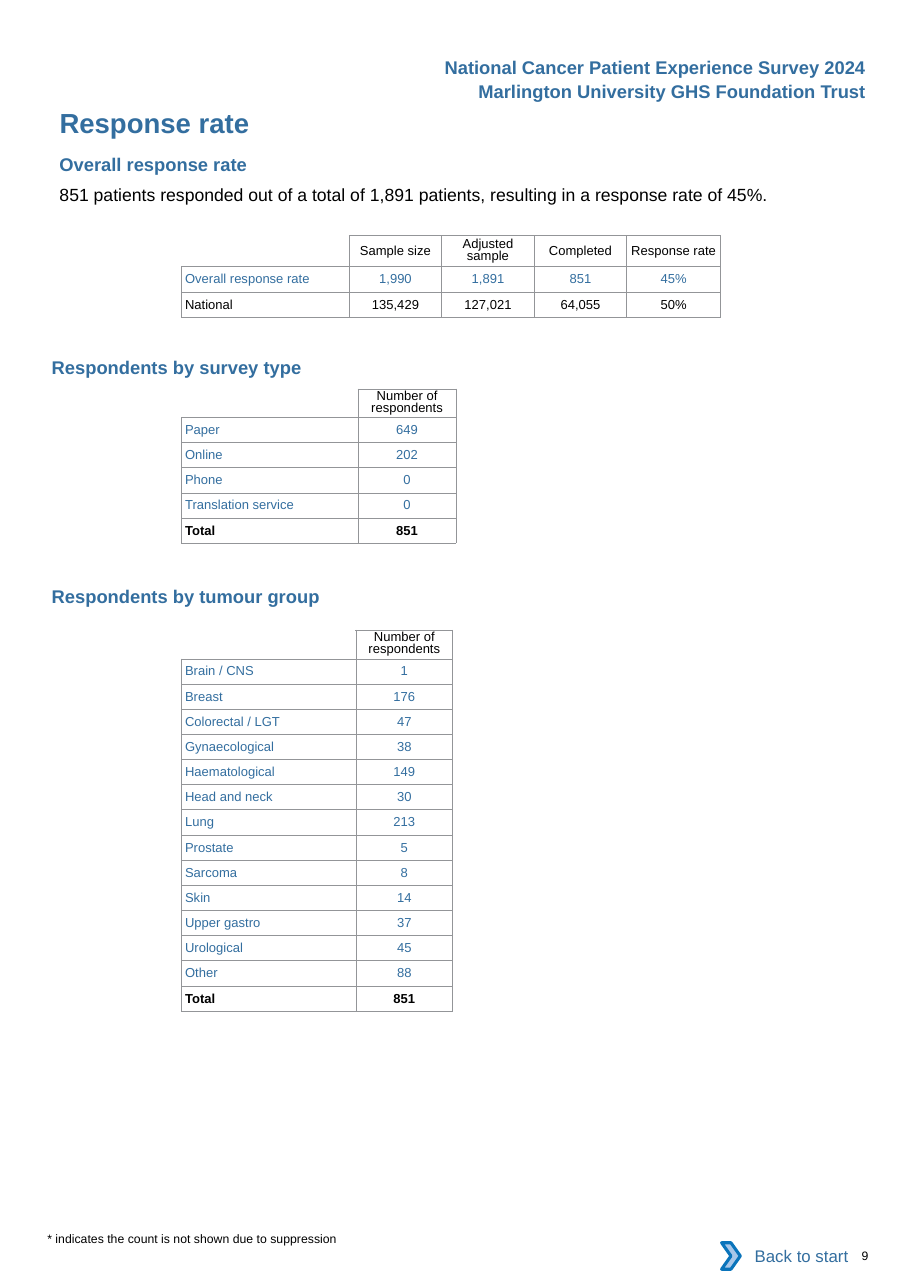
from lxml import etree
from pptx import Presentation
from pptx.dml.color import RGBColor
from pptx.enum.shapes import MSO_SHAPE
from pptx.enum.text import MSO_ANCHOR, PP_ALIGN
from pptx.oxml.ns import qn
from pptx.util import Inches, Pt

BLUE = RGBColor(0x33, 0x6E, 0x9F)
BLACK = RGBColor(0, 0, 0)
WHITE = RGBColor(255, 255, 255)
CHEVRON_FILL = RGBColor(0xA8, 0xC7, 0xE9)
CHEVRON_LINE = RGBColor(0x0A, 0x74, 0xBB)
BORDER = "939598"
FONT = "Arial"
LEFT, CENTER, RIGHT = PP_ALIGN.LEFT, PP_ALIGN.CENTER, PP_ALIGN.RIGHT
TOP, MIDDLE = MSO_ANCHOR.TOP, MSO_ANCHOR.MIDDLE
RECTANGLE, CHEVRON = MSO_SHAPE.RECTANGLE, MSO_SHAPE.CHEVRON

OVERALL = [
    ("", "Sample size", "Adjusted sample", "Completed", "Response rate"),
    ("Overall response rate", "1,990", "1,891", "851", "45%"),
    ("National", "135,429", "127,021", "64,055", "50%"),
]
COUNT_HEADER = ("", "Number of respondents")
SURVEY_TYPES = [
    COUNT_HEADER, ("Paper", "649"), ("Online", "202"), ("Phone", "0"),
    ("Translation service", "0"), ("Total", "851"),
]
TUMOUR_GROUPS = [
    COUNT_HEADER, ("Brain / CNS", "1"), ("Breast", "176"),
    ("Colorectal / LGT", "47"), ("Gynaecological", "38"),
    ("Haematological", "149"), ("Head and neck", "30"), ("Lung", "213"),
    ("Prostate", "5"), ("Sarcoma", "8"), ("Skin", "14"),
    ("Upper gastro", "37"), ("Urological", "45"), ("Other", "88"),
    ("Total", "851"),
]
TWO_LINE_HEADERS = ("Adjusted sample", "Number of respondents")


class Page:
    def __init__(self, prs):
        self.s = prs.slides.add_slide(prs.slide_layouts[5])

    def put_text(self, tf, text, size, color, bold=False, align=LEFT):
        tf.text = text
        p = tf.paragraphs[0]
        p.alignment = align
        for r in p.runs:
            r.font.name = FONT
            r.font.size = Pt(size)
            r.font.bold = bold
            r.font.color.rgb = color
        return p

    def frame(self, sp, text, size, color, bold, align=LEFT, inset=0, wrap=True):
        tf = sp.text_frame
        tf.margin_left = tf.margin_right = Inches(inset)
        tf.margin_top = tf.margin_bottom = Inches(inset / 2)
        tf.vertical_anchor = TOP
        tf.word_wrap = wrap
        self.put_text(tf, text, size, color, bold, align)

    def title(self, text, x, y, w, h):
        sp = self.s.shapes.title
        sp.left, sp.top, sp.width, sp.height = map(Inches, (x, y, w, h))
        self.frame(sp, text, 18, BLUE, True)

    def text(self, text, x, y, w, h, size, color=BLACK, bold=False):
        sp = self.s.shapes.add_textbox(*map(Inches, (x, y, w, h)))
        self.frame(sp, text, size, color, bold)

    def heading(self, text, x, y, w):
        self.text(text, x, y, w, 0.2, 12, BLUE, True)

    def running_head(self, text, x, y, w):
        sp = self.s.shapes.add_textbox(*map(Inches, (x, y, w, 0.3)))
        self.frame(sp, text, 12, BLUE, True, RIGHT, 0.1, False)

    def borders(self, cell, drawn):
        tcPr = cell._tc.get_or_add_tcPr()
        for side in "LRTB":
            ln = etree.SubElement(tcPr, qn(f"a:ln{side}"), w=str(Pt(0.5)))
            if side in drawn:
                fill = etree.SubElement(ln, qn("a:solidFill"))
                etree.SubElement(fill, qn("a:srgbClr"), val=BORDER)
            else:
                etree.SubElement(ln, qn("a:noFill"))

    def cell(self, cell, text, row, col):
        label = col == 0
        two_line = text in TWO_LINE_HEADERS
        cell.margin_top = cell.margin_bottom = 0
        side = 0.03 if label else 0.1 if two_line else 0
        cell.margin_left = cell.margin_right = Inches(side)
        cell.vertical_anchor = MIDDLE
        self.borders(cell, "RB" if row == col == 0 else "LRTB")
        cell.fill.background()
        return self.put_text(cell.text_frame, text, 8.5, BLACK,
                             align=LEFT if label else CENTER)

    def table(self, rows, y, cols, head, height):
        x, w = Inches(1.65), Inches(sum(cols))
        frame = self.s.shapes.add_table(len(rows), len(cols), x, Inches(y), w, Inches(height))
        tbl = frame.table
        tbl.first_row = tbl.horz_banding = False
        for column, width in zip(tbl.columns, cols):
            column.width = Inches(width)
        body = (height - head) / (len(rows) - 1)
        for i, row in enumerate(rows):
            tbl.rows[i].height = Inches(body if i else head)
            for j, text in enumerate(row):
                p = self.cell(tbl.cell(i, j), text, i, j)
                if text in TWO_LINE_HEADERS:
                    p.line_spacing = Pt(7.6)
                if not text:
                    p.font.size = Pt(8.5)
                for r in p.runs:
                    r.font.bold = row[0] == "Total"
                    if 0 < i < len(rows) - 1:
                        r.font.color.rgb = BLUE

    def shape(self, kind, x, y, w, h, fill):
        sp = self.s.shapes.add_shape(kind, *map(Inches, (x, y, w, h)))
        sp.shadow.inherit = False
        sp.fill.solid()
        sp.fill.fore_color.rgb = fill
        sp.line.fill.background()
        return sp

    def back_button(self, text):
        button = self.shape(RECTANGLE, 6.62, 11.19, 1.18, 0.42, WHITE)
        self.frame(button, text, 11, BLUE, False, RIGHT, 0.1)
        button.text_frame.vertical_anchor = MIDDLE
        arrow = self.shape(CHEVRON, 6.55, 11.28, 0.17, 0.24, CHEVRON_FILL)
        arrow.line.color.rgb = CHEVRON_LINE
        arrow.line.width = Pt(2)
        self.s.shapes.add_group_shape([button, arrow])


def main():
    prs = Presentation()
    prs.slide_width, prs.slide_height = Inches(8.26), Inches(11.69)
    page = Page(prs)
    page.running_head("National Cancer Patient Experience Survey 2024", 3.92, 0.46, 4.04)
    page.running_head("Marlington University GHS Foundation Trust", 4.13, 0.68, 3.83)
    page.title("Response rate", 0.54, 0.96, 4.13, 0.3)
    page.heading("Overall response rate", 0.54, 1.39, 4.13)
    page.text("851 patients responded out of a total of 1,891 patients, "
              "resulting in a response rate of 45%.", 0.54, 1.67, 7.2, 0.19, 11.5)
    page.table(OVERALL, 2.14, [1.52, 0.84, 0.84, 0.84, 0.85], 0.28, 0.74)
    page.heading("Respondents by survey type", 0.47, 3.23, 2.4)
    page.table(SURVEY_TYPES, 3.53, [1.6, 0.89], 0.26, 1.4)
    page.heading("Respondents by tumour group", 0.47, 5.31, 2.6)
    page.table(TUMOUR_GROUPS, 5.72, [1.58, 0.88], 0.26, 3.46)
    page.text("* indicates the count is not shown due to suppression",
              0.43, 11.18, 2.8, 0.13, 8)
    page.back_button("Back to start")
    page.text("9", 7.82, 11.33, 0.4, 0.13, 8)
    prs.save("out.pptx")


if __name__ == "__main__":
    main()
